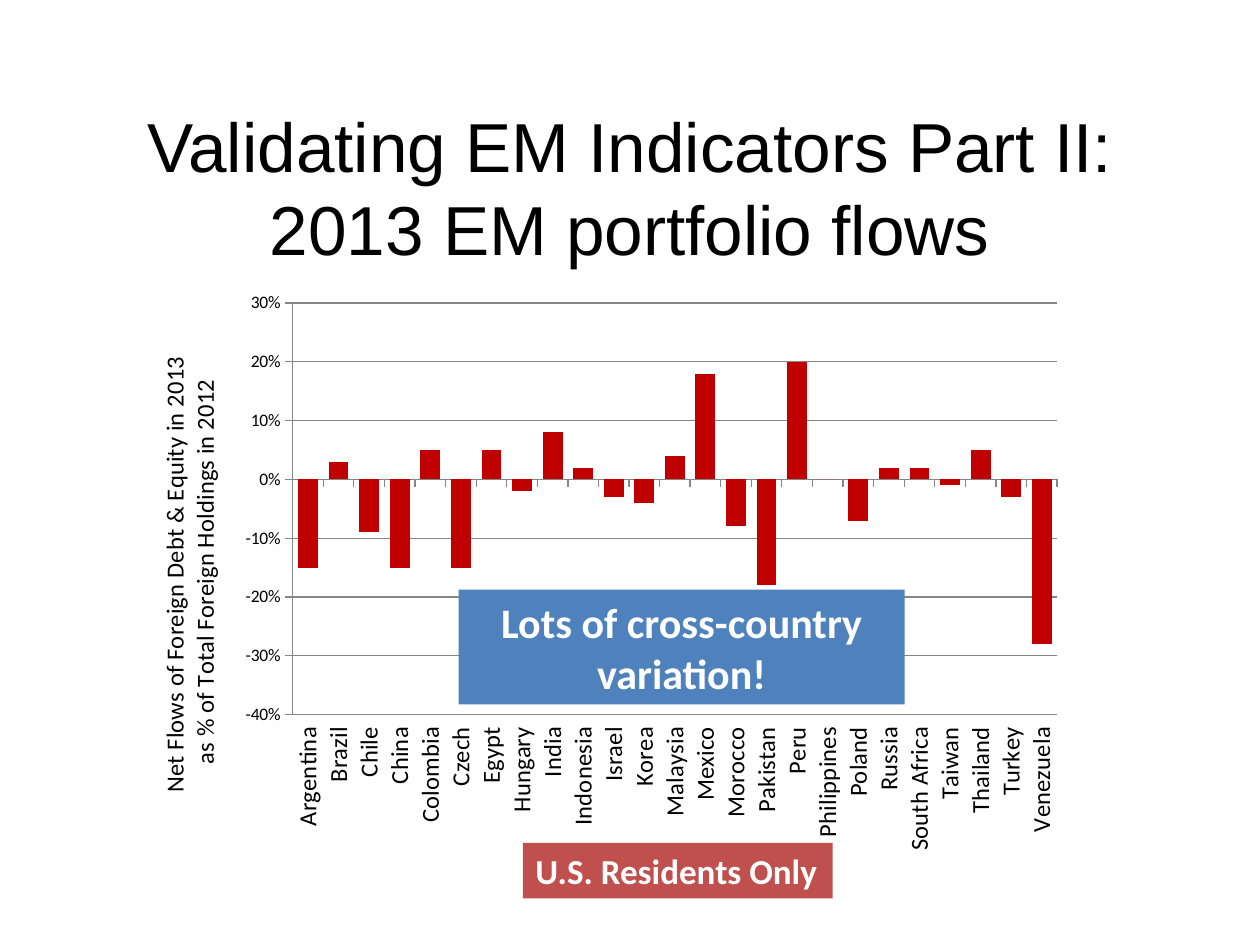
"""Build a slide on 2013 emerging-market portfolio flows."""
from lxml import etree
from pptx import Presentation, util as u
from pptx.chart import data as cd
from pptx.dml.color import RGBColor
from pptx.enum import chart as ch, shapes, text
from pptx.oxml import ns

HUES = {"ink": "000000", "bar": "C00000", "grid": "868686",
        "blue": "4F81BD", "red": "C0504D", "white": "FFFFFF"}
FLOWS = {
    "Argentina": -0.15, "Brazil": 0.03, "Chile": -0.09, "China": -0.15,
    "Colombia": 0.05, "Czech": -0.15, "Egypt": 0.05, "Hungary": -0.02,
    "India": 0.08, "Indonesia": 0.02, "Israel": -0.03, "Korea": -0.04,
    "Malaysia": 0.04, "Mexico": 0.18, "Morocco": -0.08, "Pakistan": -0.18,
    "Peru": 0.2, "Philippines": 0, "Poland": -0.07, "Russia": 0.02,
    "South Africa": 0.02, "Taiwan": -0.01, "Thailand": 0.05, "Turkey": -0.03,
    "Venezuela": -0.28,
}
PLOT = {"layoutTarget": "inner", "xMode": "edge", "yMode": "edge",
        "x": 0.17, "y": 0.036, "w": 0.81, "h": 0.71}


def hue(name):
    """Return the named colour."""
    return RGBColor.from_string(HUES[name])


def style(font, size, color="ink", face="Calibri", bold=False):
    """Format a font."""
    font.size, font.name, font.bold = u.Pt(size), face, bold
    font.color.rgb = hue(color)


def write(frame, words, align=text.PP_ALIGN.CENTER, wrap=True, **look):
    """Put formatted text into a text frame."""
    frame.word_wrap = wrap
    para = frame.paragraphs[0]
    para.text, para.alignment = words, align
    for run in para.runs:
        style(run.font, **look)


def title(slide, box, words):
    """Add the slide title."""
    frame = slide.shapes.add_textbox(*map(u.Inches, box)).text_frame
    frame.vertical_anchor = text.MSO_ANCHOR.MIDDLE
    write(frame, words, size=39.6, face="Arial")


def label(slide, box, words, fill, **look):
    """Add a filled box with bold white text."""
    shape = slide.shapes.add_shape(shapes.MSO_SHAPE.RECTANGLE, *map(u.Inches, box))
    shape.shadow.inherit = False
    shape.fill.solid()
    shape.fill.fore_color.rgb = hue(fill)
    shape.line.fill.background()
    write(shape.text_frame, words, color="white", bold=True, **look)


def place(chart):
    """Fix the inner plot area within the chart."""
    area = chart.plots[0]._element.getparent()
    for old in area.findall(ns.qn("c:layout")):
        area.remove(old)
    layout = etree.Element(ns.qn("c:layout"))
    area.insert(0, layout)
    manual = etree.SubElement(layout, ns.qn("c:manualLayout"))
    for key, val in PLOT.items():
        etree.SubElement(manual, ns.qn("c:" + key)).set("val", str(val))


def graph(slide, box):
    """Add the column chart of flows by country."""
    data = cd.CategoryChartData(number_format="0%")
    data.categories = list(FLOWS)
    data.add_series("Series 1", list(FLOWS.values()))
    chart = slide.shapes.add_chart(
        ch.XL_CHART_TYPE.COLUMN_CLUSTERED, *map(u.Inches, box), data).chart
    chart.has_legend = chart.has_title = False
    style(chart.font, 10)
    plot = chart.plots[0]
    plot.gap_width, plot.vary_by_categories = 54, False
    bars = plot.series[0]
    bars.invert_if_negative = False
    bars.format.fill.solid()
    bars.format.fill.fore_color.rgb = hue("bar")
    cats, vals = chart.category_axis, chart.value_axis
    cats.tick_label_position = ch.XL_TICK_LABEL_POSITION.LOW
    style(cats.tick_labels.font, 14)
    cats.tick_labels.font._element.getparent().getparent().getparent().find(
        ns.qn("a:bodyPr")).set("rot", "-5400000")
    vals.minimum_scale, vals.maximum_scale, vals.major_unit = -0.4, 0.3, 0.1
    vals.has_major_gridlines = True
    vals.tick_labels.number_format = "0%"
    vals.tick_labels.number_format_is_linked = False
    for axis in (cats, vals):
        axis.major_tick_mark = ch.XL_TICK_MARK.OUTSIDE
    for part in (cats, vals, vals.major_gridlines):
        part.format.line.color.rgb = hue("grid")
        part.format.line.width = u.Pt(0.75)
    frame = vals.axis_title.text_frame
    write(frame, "Net Flows of Foreign Debt & Equity in 2013 \n"
          "as % of Total Foreign Holdings in 2012", size=14)
    frame._txBody.find(ns.qn("a:bodyPr")).set("rot", "-5400000")
    place(chart)


def main():
    """Build and save the slide."""
    deck = Presentation()
    deck.slide_width, deck.slide_height = u.Inches(10), u.Inches(7.5)
    slide = deck.slides.add_slide(deck.slide_layouts[6])
    title(slide, (0.5, 1.13, 9, 0.69),
          "Validating EM Indicators Part II:\n2013 EM portfolio flows")
    graph(slide, (1.05, 2.24, 7.49, 4.6))
    label(slide, (3.64, 4.68, 3.54, 0.91), "Lots of cross-country variation!",
          "blue", size=24)
    label(slide, (4.15, 6.69, 2.46, 0.44), "U.S. Residents Only", "red",
          size=20, wrap=False, align=text.PP_ALIGN.LEFT)
    deck.save("out.pptx")


if __name__ == "__main__":
    main()
